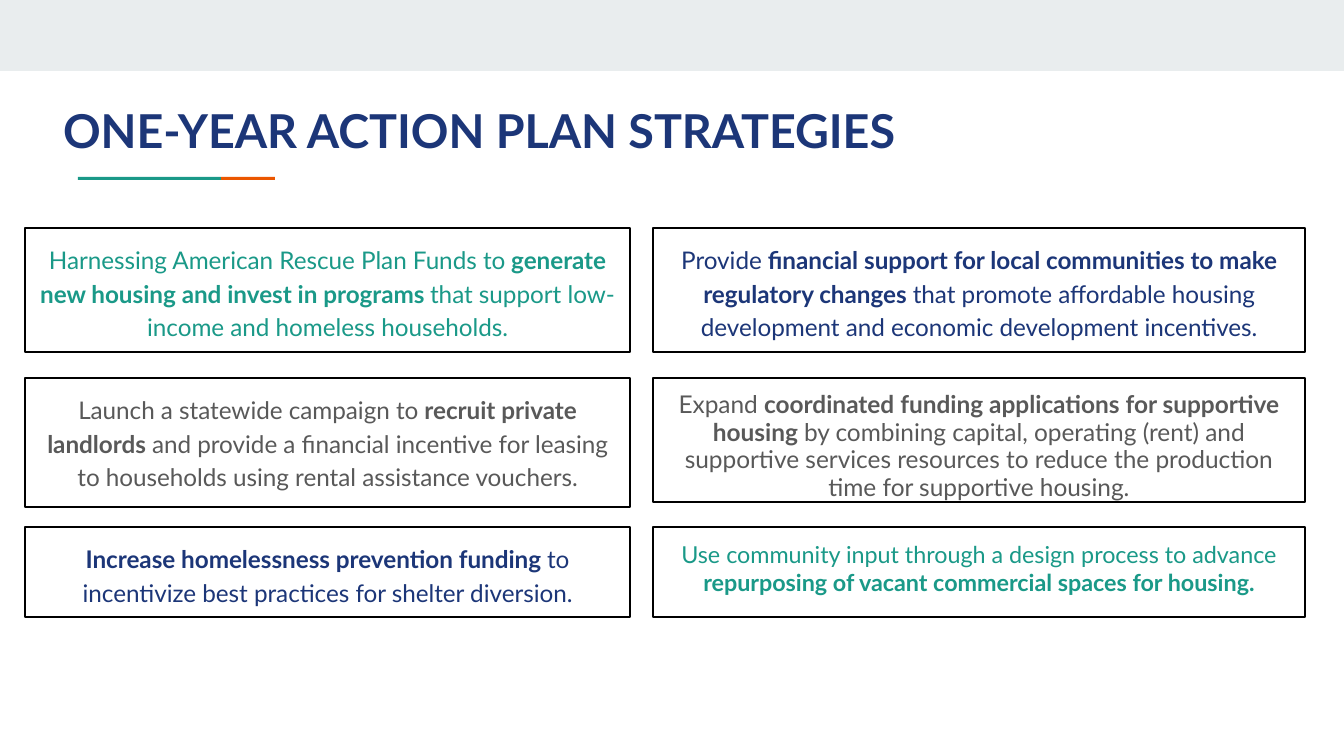
import pptx
import pptx.util
from pptx.dml.color import RGBColor
from pptx.enum.shapes import MSO_SHAPE
from pptx.enum.text import MSO_ANCHOR, MSO_AUTO_SIZE, PP_ALIGN
from lxml import etree

EMU_PER_PX = 914400 / 134.4
FONT = "Lato"
INSET = 13

NAVY = RGBColor(0x1C, 0x36, 0x78)
TEAL = RGBColor(0x1A, 0x99, 0x88)
ORANGE = RGBColor(0xEB, 0x56, 0x00)
GREY = RGBColor(0x59, 0x59, 0x59)
PALE = RGBColor(0xE9, 0xED, 0xEE)
BLACK = RGBColor(0, 0, 0)

# Strategy grid: (left, width) of columns, (top, height) of rows
COLUMNS = [(25, 605), (653, 652)]
ROWS = [(228, 124), (378, 124), (527, 90)]

# Row, column, colour, size, line spacing, (text, bold) spans
STRATEGIES = [
    (0, 0, TEAL, 13, 1.15, [
        ("Harnessing American Rescue Plan Funds to ", False),
        ("generate new housing and invest in programs ", True),
        ("that support low-income and homeless households.", False)]),
    (0, 1, NAVY, 13, 1.15, [
        ("Provide ", False),
        ("financial support for local communities to make regulatory changes", True),
        (" that promote affordable housing development and economic "
         "development incentives.", False)]),
    (1, 0, GREY, 13, 1.15, [
        ("Launch a statewide campaign to ", False),
        ("recruit private landlords", True),
        (" and provide a financial incentive for leasing to households "
         "using rental assistance vouchers.", False)]),
    (1, 1, GREY, 13.1, 0.95, [
        ("Expand ", False),
        ("coordinated funding applications for supportive housing ", True),
        ("by combining capital, operating (rent) and supportive services "
         "resources to reduce the production time for supportive housing.", False)]),
    (2, 0, NAVY, 13, 1.15, [
        ("Increase homelessness prevention funding", True),
        (" to incentivize best practices for shelter diversion.", False)]),
    (2, 1, TEAL, 12.5, 1, [
        ("Use community input through a design process to advance ", False),
        ("repurposing of vacant commercial spaces for housing.", True)]),
]
BODY_CELL = (1, 1)


def px(length):
    return pptx.util.Emu(round(length * EMU_PER_PX))


def place(shape, left, top, width, height):
    shape.left, shape.top = px(left), px(top)
    shape.width, shape.height = px(width), px(height)


def add_bar(page, left, top, width, height, colour):
    bar = page.shapes.add_shape(
        MSO_SHAPE.RECTANGLE, px(left), px(top), px(width), px(height))
    bar.shadow.inherit = False
    bar.fill.solid()
    bar.fill.fore_color.rgb = colour
    bar.line.fill.background()


def prepare_frame(shape):
    frame = shape.text_frame
    frame.word_wrap = True
    frame.auto_size = MSO_AUTO_SIZE.NONE
    frame.vertical_anchor = MSO_ANCHOR.TOP
    frame.margin_left = frame.margin_right = px(INSET)
    frame.margin_top = frame.margin_bottom = px(INSET)
    return frame


def style_paragraph(para, size, colour, align):
    para.alignment = align
    para.space_before = pptx.util.Pt(0)
    para.font.name = FONT
    para.font.size = pptx.util.Pt(size)
    para.font.color.rgb = colour


def remove_bullet(para):
    properties = para._p.get_or_add_pPr()
    properties.set("marL", "0")
    properties.set("indent", "0")
    bullet = etree.Element(pptx.oxml.ns.qn("a:buNone"))
    properties.insert_element_before(bullet, "a:tabLst", "a:defRPr", "a:extLst")


def fill_title(title):
    place(title, 50, 89, 1302, 79)
    para = prepare_frame(title).paragraphs[0]
    para.add_run().text = "ONE-YEAR ACTION PLAN STRATEGIES"
    style_paragraph(para, 25, NAVY, PP_ALIGN.LEFT)
    para.font.bold = True


def fill_strategy(box, colour, size, spacing, spans):
    box.line.color.rgb = BLACK
    box.line.width = pptx.util.Pt(0.75)
    para = prepare_frame(box).paragraphs[0]
    style_paragraph(para, size, colour, PP_ALIGN.CENTER)
    para.line_spacing = spacing
    for text, bold in spans:
        span = para.add_run()
        span.text = text
        span.font.bold = bold
    if box.is_placeholder:
        remove_bullet(para)


def main():
    deck = pptx.Presentation()
    deck.slide_width, deck.slide_height = px(1344), px(756)
    page = deck.slides.add_slide(deck.slide_layouts[1])

    # Top band and two-colour accent rule
    add_bar(page, 0, 0, 1344, 71, PALE)
    add_bar(page, 221, 177, 54, 3, ORANGE)
    add_bar(page, 78, 177, 143, 3, TEAL)

    # Heading
    fill_title(page.shapes.title)

    # Strategy boxes
    for row, column, colour, size, spacing, spans in STRATEGIES:
        left, width = COLUMNS[column]
        top, height = ROWS[row]
        if (row, column) == BODY_CELL:
            box = page.placeholders[1]
        else:
            box = page.shapes.add_textbox(0, 0, 0, 0)
        # The landlord box is slightly taller than its neighbour
        extra = 5 if (row, column) == (1, 0) else 0
        place(box, left, top, width, height + extra)
        fill_strategy(box, colour, size, spacing, spans)

    deck.save("out.pptx")


if __name__ == "__main__":
    main()
